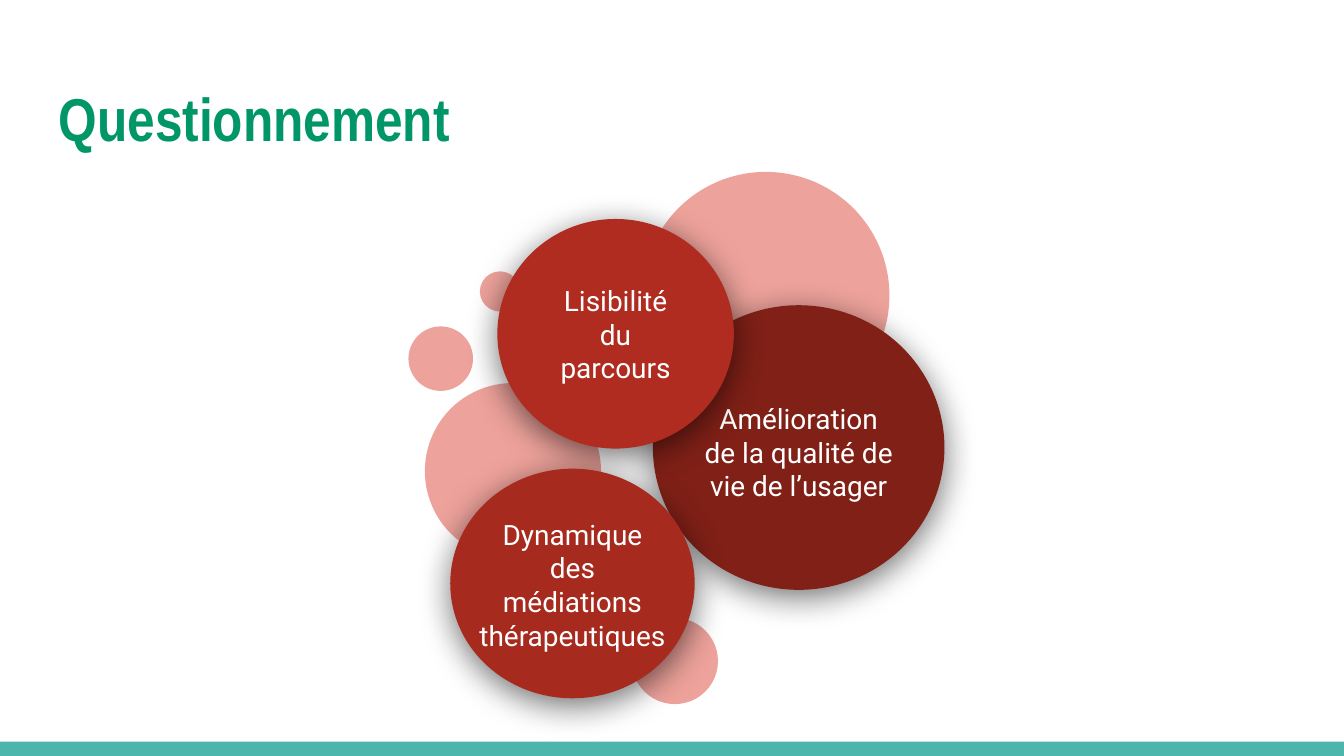
from dataclasses import dataclass

from lxml import etree
from pptx import Presentation
from pptx.dml.color import RGBColor
from pptx.enum.shapes import MSO_SHAPE
from pptx.enum.text import MSO_ANCHOR, PP_ALIGN
from pptx.oxml.ns import qn
from pptx.util import Cm, Pt

OVAL, RECT = MSO_SHAPE.OVAL, MSO_SHAPE.RECTANGLE
LEFT, CENTER = PP_ALIGN.LEFT, PP_ALIGN.CENTER
TOP, MIDDLE = MSO_ANCHOR.TOP, MSO_ANCHOR.MIDDLE

SLIDE_W, SLIDE_H = 25.4, 14.29
BAR_H = 0.27
INSET = 0.25
TEAL, GREEN, PINK, WHITE = "4DB6AC", "009668", "EDA29B", "FFFFFF"


@dataclass(frozen=True)
class Bubble:
    """Plain decorative circle, in cm."""
    x: float
    y: float
    size: float


@dataclass(frozen=True)
class Theme:
    """Shadowed ellipse with its label; boxes are (x, y, w, h) in cm."""
    text: str
    color: str
    oval: tuple[float, float, float, float]
    label: tuple[float, float, float, float]


BUBBLES = [
    Bubble(11.94, 11.68, 1.63),
    Bubble(7.72, 6.17, 1.22),
    Bubble(8.03, 7.24, 3.33),
    Bubble(12.14, 3.25, 4.67),
    Bubble(9.07, 5.13, 0.76),
]
THEMES = [
    Theme("Amélioration de la qualité de vie de l’usager", "802017",
          (12.34, 5.77, 5.51, 5.38), (13, 7.26, 4.19, 2.57)),
    Theme("Lisibilité du parcours", "B02C20",
          (9.4, 4.14, 4.47, 4.34), (10.11, 4.88, 3.05, 2.87)),
    Theme("Dynamique des médiations thérapeutiques", "A72A1E",
          (8.51, 8.86, 4.62, 4.34), (8.79, 9.68, 4.06, 2.74)),
]


def rgb(color: str) -> RGBColor:
    return RGBColor.from_string(color)


def add_filled(shapes, kind, box, color: str):
    sp = shapes.add_shape(kind, *map(Cm, box))
    sp.fill.solid()
    sp.fill.fore_color.rgb = rgb(color)
    sp.line.fill.background()
    sp.shadow.inherit = False
    return sp


def add_drop_shadow(sp) -> None:
    effects = sp._element.spPr.find(qn("a:effectLst"))
    shadow = etree.SubElement(effects, qn("a:outerShdw"), blurRad=str(Pt(18)),
                              dist=str(Pt(4)), dir="5400000", rotWithShape="0")
    clr = etree.SubElement(shadow, qn("a:srgbClr"), val="000000")
    etree.SubElement(clr, qn("a:alpha"), val="55000")


def write_text(sp, text: str, *, size: float, font: str, color: str,
               bold: bool = False, align=LEFT, anchor=TOP) -> None:
    tf = sp.text_frame
    tf.word_wrap = True
    tf.vertical_anchor = anchor
    tf.margin_left = tf.margin_right = tf.margin_top = tf.margin_bottom = Cm(INSET)
    p = tf.paragraphs[0]
    p.alignment = align
    r = p.add_run()
    r.text = text
    r.font.size, r.font.name, r.font.bold = Pt(size), font, bold
    r.font.color.rgb = rgb(color)


def add_theme(s, theme: Theme) -> None:
    shapes = s.shapes.add_group_shape().shapes
    add_drop_shadow(add_filled(shapes, OVAL, theme.oval, theme.color))
    label = shapes.add_textbox(*map(Cm, theme.label))
    write_text(label, theme.text, size=15, font="Roboto", color=WHITE,
               align=CENTER, anchor=MIDDLE)


def main() -> None:
    prs = Presentation()
    prs.slide_width, prs.slide_height = Cm(SLIDE_W), Cm(SLIDE_H)
    s = prs.slides.add_slide(prs.slide_layouts[5])

    title = s.shapes.title
    title.left, title.top, title.width, title.height = map(Cm, (0.86, 1.24, 23.67, 1.96))
    write_text(title, "Questionnement", size=32.4, font="Arial Narrow",
               color=GREEN, bold=True, anchor=MIDDLE)

    add_filled(s.shapes, RECT, (0, SLIDE_H - BAR_H, SLIDE_W, BAR_H), TEAL)
    bubbles = s.shapes.add_group_shape().shapes
    for b in BUBBLES:
        add_filled(bubbles, OVAL, (b.x, b.y, b.size, b.size), PINK)
    for theme in THEMES:
        add_theme(s, theme)

    prs.save("out.pptx")


if __name__ == "__main__":
    main()
